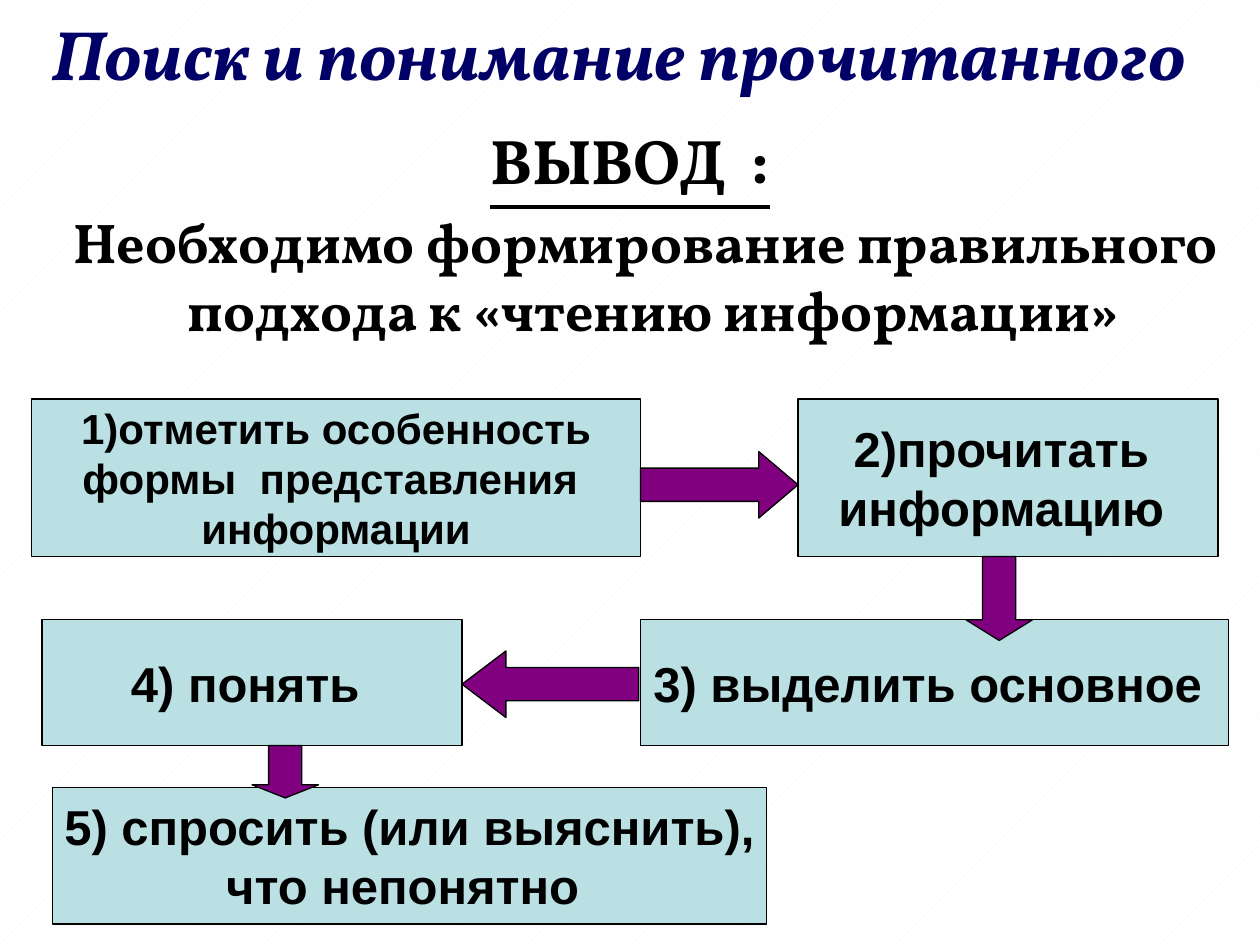
from dataclasses import dataclass

from pptx import Presentation
from pptx.dml.color import RGBColor
from pptx.enum.dml import MSO_PATTERN
from pptx.enum.shapes import MSO_SHAPE as Form
from pptx.enum.text import MSO_ANCHOR as Anchor, PP_ALIGN as Align
from pptx.util import Pt

BLACK, NAVY, PURPLE, AQUA = "000000", "000066", "800080", "BBE0E3"
SERIF, SANS = "Vollkorn", "Arial"
ARROW_WIDTH = 38


@dataclass
class Area:
    left: float
    top: float
    width: float
    height: float

    def lengths(self) -> list:
        return [Pt(n) for n in (self.left, self.top, self.width, self.height)]


@dataclass
class Step:
    area: Area
    lines: list[str]
    size: int = 28


@dataclass
class Arrow:
    form: Form
    area: Area
    head: float


STEPS = [
    Step(Area(18, 228, 348, 90),
         ["1)отметить особенность", "формы  представления ", "информации"], 24),
    Step(Area(456, 228, 240, 90), ["2)прочитать ", "информацию "]),
    Step(Area(366, 354, 336, 72), ["3) выделить основное "]),
    Step(Area(24, 354, 240, 72), ["4) понять "]),
    Step(Area(30, 450, 408, 78), ["5) спросить (или выяснить),", "что непонятно "]),
]

ARROWS = [
    Arrow(Form.RIGHT_ARROW, Area(366, 258, 90, ARROW_WIDTH), 0.59),
    Arrow(Form.DOWN_ARROW, Area(552, 318, ARROW_WIDTH, 48), 0.31),
    Arrow(Form.LEFT_ARROW, Area(264, 372, 101, ARROW_WIDTH), 0.66),
    Arrow(Form.DOWN_ARROW, Area(144, 426, ARROW_WIDTH, 30), 0.25),
]


def color(code: str) -> RGBColor:
    return RGBColor.from_string(code)


def apply(target, values: dict) -> None:
    for name, value in values.items():
        setattr(target, name, value)


def write(para, text: str, size: int, face: str, ink: str = BLACK, **extra) -> None:
    para.alignment = Align.CENTER
    span = para.add_run()
    span.text = text
    apply(span.font, {"size": Pt(size), "name": face, "bold": True, **extra})
    span.font.color.rgb = color(ink)


def add_text_box(page, area: Area, anchor: Anchor):
    frame = page.shapes.add_textbox(*area.lengths()).text_frame
    apply(frame, {"word_wrap": True, "vertical_anchor": anchor})
    return frame


def add_outlined(page, form: Form, area: Area, fill: str):
    shape = page.shapes.add_shape(form, *area.lengths())
    shape.shadow.inherit = False
    shape.fill.solid()
    shape.fill.fore_color.rgb = color(fill)
    shape.line.color.rgb = color(BLACK)
    shape.line.width = Pt(0.75)
    return shape


def add_step(page, step: Step) -> None:
    frame = add_outlined(page, Form.RECTANGLE, step.area, AQUA).text_frame
    apply(frame, {"word_wrap": False, "vertical_anchor": Anchor.MIDDLE})
    for index, line in enumerate(step.lines):
        para = frame.add_paragraph() if index else frame.paragraphs[0]
        write(para, line, step.size, SANS)


def add_arrow(page, arrow: Arrow) -> None:
    shape = add_outlined(page, arrow.form, arrow.area, PURPLE)
    shape.adjustments[0] = 0.5
    shape.adjustments[1] = arrow.head


def add_background(page) -> None:
    fill = page.background.fill
    fill.patterned()
    fill.pattern = MSO_PATTERN.WIDE_UPWARD_DIAGONAL
    fill.fore_color.rgb = color("F8F8F8")
    fill.back_color.rgb = color("FFFFFF")


def add_conclusion(page) -> None:
    frame = add_text_box(page, Area(0, 66, 720, 456), Anchor.TOP)
    write(frame.paragraphs[0], "ВЫВОД  :", 36, SERIF, underline=True)
    para = frame.add_paragraph()
    para.space_before = Pt(6)
    properties = para._p.get_or_add_pPr()
    properties.set("marL", str(Pt(27)))
    properties.set("indent", str(Pt(-9)))
    write(para, "Необходимо формирование правильного подхода к «чтению информации»",
          32, SERIF)


def main() -> None:
    deck = Presentation()
    apply(deck, {"slide_width": Pt(720), "slide_height": Pt(540)})
    page = deck.slides.add_slide(deck.slide_layouts[6])
    add_background(page)
    title = add_text_box(page, Area(0, 0, 708, 60), Anchor.MIDDLE)
    write(title.paragraphs[0], "Поиск и понимание прочитанного", 40, SERIF, NAVY,
          italic=True)
    add_conclusion(page)
    for step in STEPS:
        add_step(page, step)
    for arrow in ARROWS:
        add_arrow(page, arrow)
    deck.save("out.pptx")


if __name__ == "__main__":
    main()
